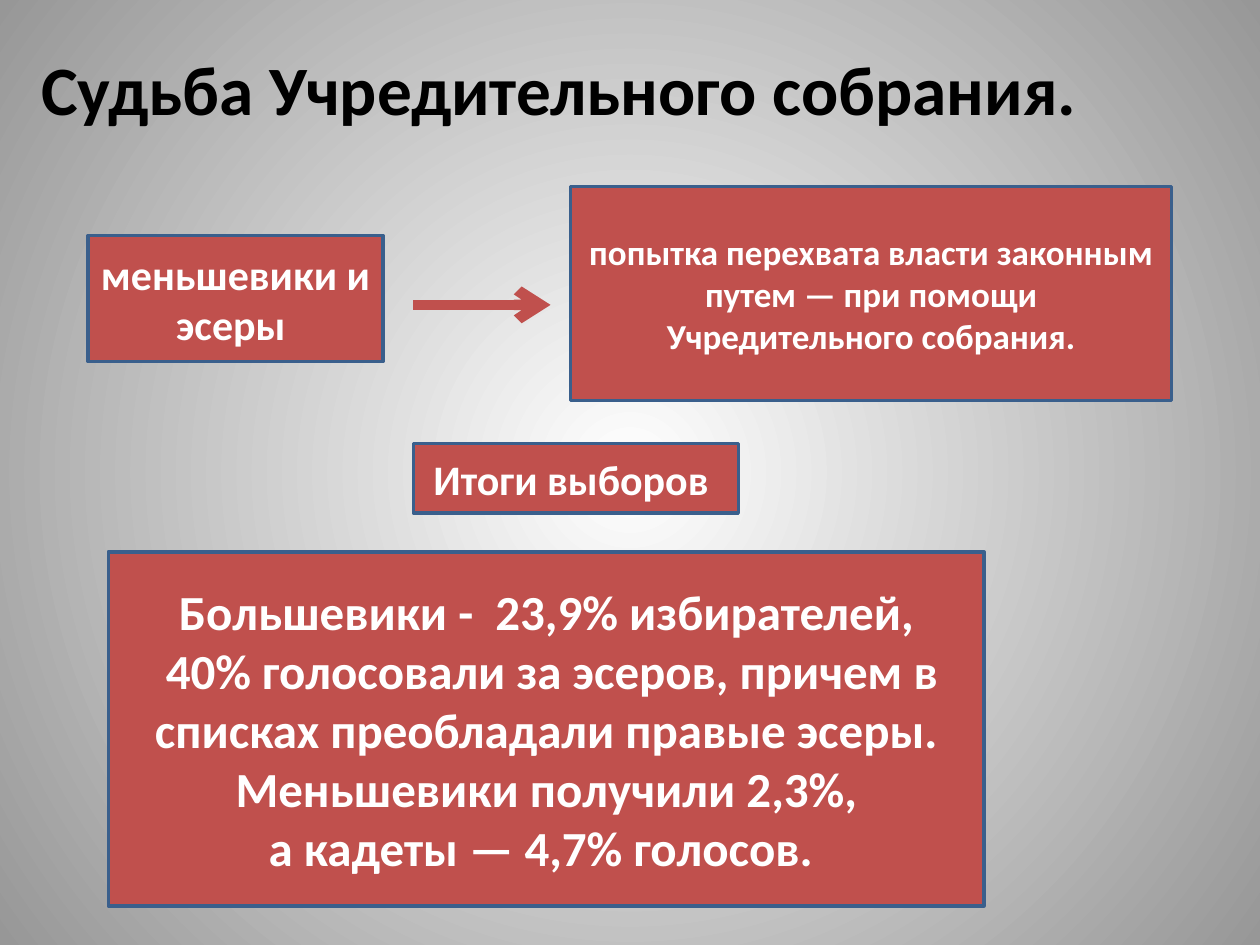
from dataclasses import dataclass

from lxml import etree
from pptx import Presentation
from pptx.dml.color import RGBColor
from pptx.enum.shapes import MSO_CONNECTOR, MSO_SHAPE
from pptx.enum.text import MSO_ANCHOR, PP_ALIGN
from pptx.oxml.ns import qn
from pptx.util import Inches, Pt

RECTANGLE = MSO_SHAPE.RECTANGLE
STRAIGHT = MSO_CONNECTOR.STRAIGHT
MIDDLE = MSO_ANCHOR.MIDDLE
CENTER = PP_ALIGN.CENTER

# The slide is a grid of 100 columns by 75 rows
COLUMNS, ROWS = 100, 75
WIDTH, HEIGHT = Inches(10), Inches(7.5)


@dataclass(frozen=True)
class Theme:
    font: str = "Calibri"
    glow: str = "FFFFFF"
    edge: str = "979797"
    box: str = "C0504D"
    border: str = "3A5F8C"
    heading: str = "000000"
    box_text: str = "FFFFFF"
    heading_size: float = 39.6
    result_size: float = 28
    label_size: float = 24
    detail_size: float = 20
    border_width: float = 2
    arrow_width: float = 6


@dataclass(frozen=True)
class Block:
    column: float
    row: float
    columns: float
    rows: float
    size: float
    text: str


THEME = Theme()

TITLE = Block(0, 3, 90, 7.9, THEME.heading_size, "Судьба Учредительного собрания. ")
BOXES = [
    Block(7, 18.7, 23.4, 10, THEME.label_size, "меньшевики и эсеры "),
    Block(45.3, 14.8, 47.7, 17, THEME.detail_size,
          "попытка перехвата власти законным путем — при помощи "
          "Учредительного собрания."),
    Block(32.8, 35.2, 25.8, 5.5, THEME.label_size, "Итоги выборов "),
    Block(8.6, 43.8, 69.5, 28.1, THEME.result_size,
          "Большевики -  23,9% избирателей,\n"
          " 40% голосовали за эсеров, причем в списках преобладали правые эсеры.\n"
          " Меньшевики получили 2,3%, \n"
          "а кадеты — 4,7% голосов. "),
]
ARROW_START, ARROW_END, ARROW_ROW = 32.8, 43.7, 24.2


def x(columns: float) -> int:
    return round(WIDTH * columns / COLUMNS)


def y(rows: float) -> int:
    return round(HEIGHT * rows / ROWS)


def rgb(value: str) -> RGBColor:
    return RGBColor.from_string(value)


def frame(block: Block) -> tuple[int, int, int, int]:
    return x(block.column), y(block.row), x(block.columns), y(block.rows)


def write(shape, block: Block, color: str) -> None:
    content = shape.text_frame
    content.word_wrap = True
    content.vertical_anchor = MIDDLE
    content.text = block.text
    for paragraph in content.paragraphs:
        paragraph.alignment = CENTER
        for run in paragraph.runs:
            run.font.name = THEME.font
            run.font.size = Pt(block.size)
            run.font.bold = True
            run.font.color.rgb = rgb(color)


def paint_background(slide) -> None:
    fill = slide.background.fill
    fill.gradient()
    for stop, color in zip(fill.gradient_stops, (THEME.glow, THEME.edge)):
        stop.color.rgb = rgb(color)
    # Turn the linear gradient into a circular one around the centre
    gradient = slide.element.find(".//" + qn("a:gradFill"))
    gradient.remove(gradient.find(qn("a:lin")))
    circle = etree.SubElement(gradient, qn("a:path"), {"path": "circle"})
    etree.SubElement(circle, qn("a:fillToRect"), dict.fromkeys("ltrb", "50000"))


def add_title(slide, block: Block) -> None:
    write(slide.shapes.add_textbox(*frame(block)), block, THEME.heading)


def add_box(slide, block: Block) -> None:
    box = slide.shapes.add_shape(RECTANGLE, *frame(block))
    box.shadow.inherit = False
    box.fill.solid()
    box.fill.fore_color.rgb = rgb(THEME.box)
    box.line.color.rgb = rgb(THEME.border)
    box.line.width = Pt(THEME.border_width)
    write(box, block, THEME.box_text)


def add_arrow(slide, start: float, end: float, row: float) -> None:
    arrow = slide.shapes.add_connector(STRAIGHT, x(start), y(row), x(end), y(row))
    arrow.line.color.rgb = rgb(THEME.box)
    arrow.line.width = Pt(THEME.arrow_width)
    etree.SubElement(arrow.line._get_or_add_ln(), qn("a:tailEnd"), {"type": "arrow"})
    etree.SubElement(arrow._element.spPr, qn("a:effectLst"))


def main() -> None:
    presentation = Presentation()
    presentation.slide_width, presentation.slide_height = WIDTH, HEIGHT
    slide = presentation.slides.add_slide(presentation.slide_layouts[6])

    paint_background(slide)
    add_title(slide, TITLE)
    for block in BOXES:
        add_box(slide, block)
    # From the parties to their plan
    add_arrow(slide, ARROW_START, ARROW_END, ARROW_ROW)

    presentation.save("out.pptx")


if __name__ == "__main__":
    main()
